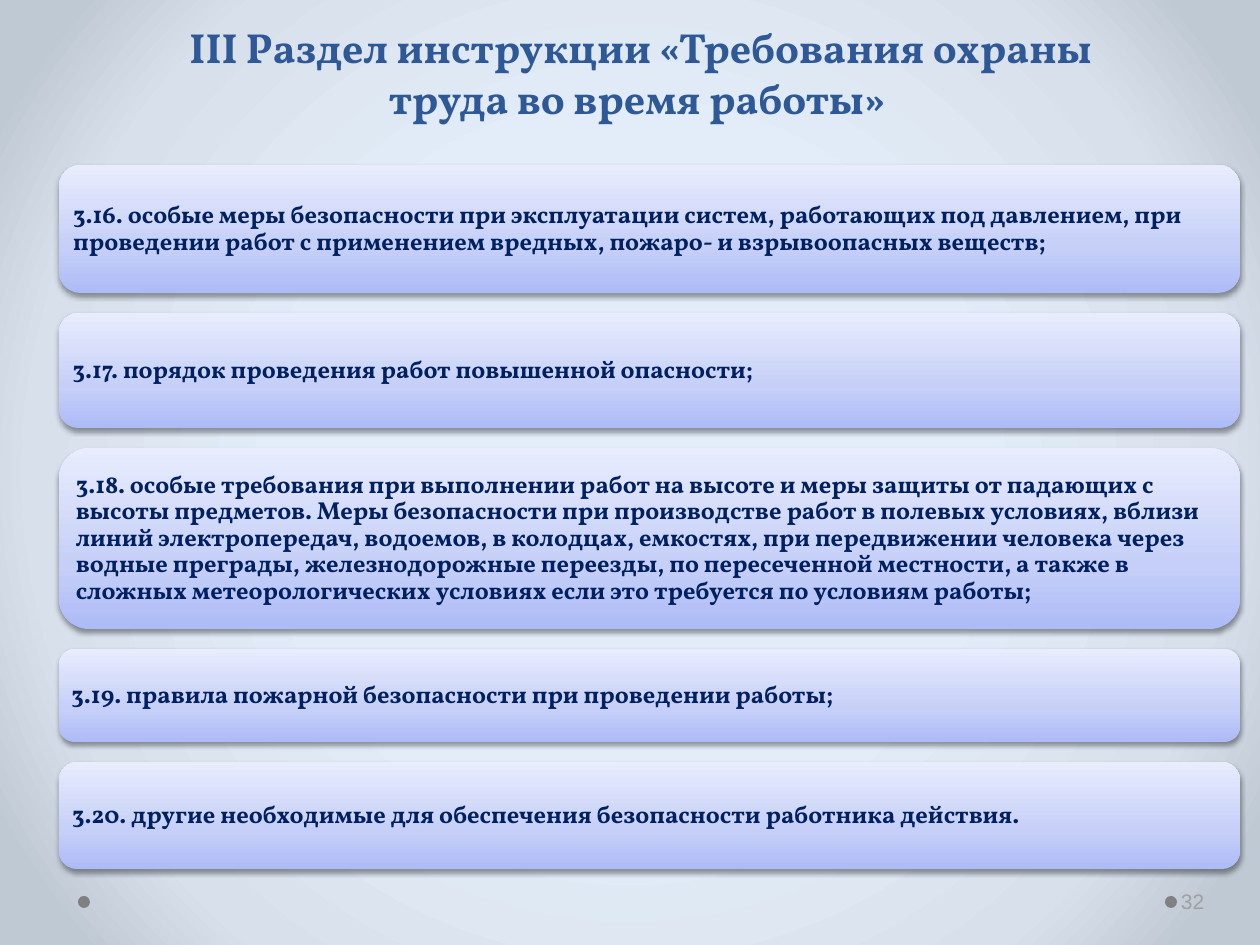
from lxml.etree import SubElement
from pptx import Presentation
from pptx.dml.color import RGBColor
from pptx.enum.shapes import MSO_SHAPE
from pptx.enum.text import MSO_ANCHOR, PP_ALIGN
from pptx.oxml.ns import qn
from pptx.util import Pt

EMU_PER_PX = 914400 / 126
SLIDE_WIDTH, SLIDE_HEIGHT = 1260, 945

BACKGROUND_STOPS = [(43, "E3EDF9"), (76, "D8E0EB"), (92, "BFC9D4")]
PANEL_STOPS = [(0, "ADBBF6"), (35, "C5CFF8"), (100, "E8ECFD")]

TITLE_FORMAT = {"size": Pt(24), "name": "Vollkorn", "bold": True}
PANEL_FORMAT = {"size": Pt(14), "name": "Vollkorn", "bold": True}
NUMBER_FORMAT = {"size": Pt(12), "name": "Arial", "bold": False}

PANEL_LEFT, PANEL_TOP, PANEL_WIDTH, PANEL_GAP = 59, 165, 1181, 20
PANELS = [
    (128, "3.16. особые меры безопасности при эксплуатации систем, работающих под давлением, "
          "при проведении работ с применением вредных, пожаро- и взрывоопасных веществ;"),
    (115, "3.17. порядок проведения работ повышенной опасности;"),
    (181, "3.18. особые требования при выполнении работ на высоте и меры защиты от падающих "
          "с высоты предметов. Меры безопасности при производстве работ в полевых условиях, "
          "вблизи линий электропередач, водоемов, в колодцах, емкостях, при передвижении "
          "человека через водные преграды, железнодорожные переезды, по пересеченной "
          "местности, а также в сложных метеорологических условиях если это требуется "
          "по условиям работы;"),
    (93, "3.19. правила пожарной безопасности при проведении работы;"),
    (107, "3.20. другие необходимые для обеспечения безопасности работника действия."),
]


def px(length):
    return round(length * EMU_PER_PX)


def color(hex_string):
    return RGBColor.from_string(hex_string)


def set_attributes(target, values):
    for name, value in values.items():
        setattr(target, name, value)


def replace_solid_with_gradient(properties, stops, angle=None):
    """Use a linear gradient at the given angle, or a circular one without it."""
    solid = properties.find(qn("a:solidFill"))
    gradient = properties.makeelement(qn("a:gradFill"), {"rotWithShape": "1"})
    stop_list = SubElement(gradient, qn("a:gsLst"))
    for position, hex_string in stops:
        stop = SubElement(stop_list, qn("a:gs"), pos=str(position * 1000))
        SubElement(stop, qn("a:srgbClr"), val=hex_string)
    if angle is None:
        circle = SubElement(gradient, qn("a:path"), path="circle")
        SubElement(circle, qn("a:fillToRect"), dict.fromkeys("ltrb", "50000"))
    else:
        SubElement(gradient, qn("a:lin"), ang=str(angle * 60000), scaled="0")
    properties.replace(solid, gradient)


def add_drop_shadow(shape):
    effects = shape._element.spPr.find(qn("a:effectLst"))
    shadow = SubElement(effects, qn("a:outerShdw"), blurRad=str(Pt(3.1)),
                        dist=str(Pt(1.6)), dir="5400000", rotWithShape="0")
    shadow_color = SubElement(shadow, qn("a:srgbClr"), val="000000")
    SubElement(shadow_color, qn("a:alpha"), val="38000")


class SlideBuilder:
    def __init__(self, slide):
        self.slide = slide

    def background(self, stops):
        self.slide.background.fill.solid()
        properties = self.slide._element.find(".//" + qn("p:bgPr"))
        replace_solid_with_gradient(properties, stops)

    def shape(self, kind, box, fill):
        shape = self.slide.shapes.add_shape(kind, *map(px, box))
        shape.shadow.inherit = False
        shape.fill.solid()
        shape.fill.fore_color.rgb = color(fill)
        shape.line.fill.background()
        return shape

    def set_text(self, shape, text, font_format, hex_string, margins,
                 anchor=MSO_ANCHOR.MIDDLE, **paragraph_format):
        frame = shape.text_frame
        sides = ("margin_left", "margin_top", "margin_right", "margin_bottom")
        set_attributes(frame, dict(zip(sides, map(px, margins))))
        set_attributes(frame, {"word_wrap": True, "vertical_anchor": anchor})
        paragraph = frame.paragraphs[0]
        set_attributes(paragraph, {"alignment": PP_ALIGN.LEFT, **paragraph_format})
        run = paragraph.add_run()
        run.text = text
        set_attributes(run.font, font_format)
        run.font.color.rgb = color(hex_string)

    def text(self, box, *args, **kwargs):
        self.set_text(self.slide.shapes.add_textbox(*map(px, box)), *args, **kwargs)

    def dot(self, left, top):
        self.shape(MSO_SHAPE.OVAL, (left, top, 12, 12), "808080")

    def panel(self, box, text):
        shape = self.shape(MSO_SHAPE.ROUNDED_RECTANGLE, box, PANEL_STOPS[0][1])
        replace_solid_with_gradient(shape._element.spPr, PANEL_STOPS, angle=270)
        add_drop_shadow(shape)
        self.set_text(shape, text, PANEL_FORMAT, "002060", (8, 8, 8, 8), line_spacing=0.9)


def main():
    presentation = Presentation()
    presentation.slide_width = px(SLIDE_WIDTH)
    presentation.slide_height = px(SLIDE_HEIGHT)
    builder = SlideBuilder(presentation.slides.add_slide(presentation.slide_layouts[6]))

    builder.background(BACKGROUND_STOPS)
    for left in (1165, 78):
        builder.dot(left, 896)
    builder.text((1177, 876, 77, 50), "32", NUMBER_FORMAT, "A0A0A0", (4, 6, 6, 6))
    builder.text((159, 16, 963, 115),
                 "III Раздел инструкции «Требования охраны труда во время работы» ",
                 TITLE_FORMAT, "2F5897", (13, 6, 13, 6),
                 anchor=MSO_ANCHOR.TOP, alignment=PP_ALIGN.CENTER)

    top = PANEL_TOP
    for height, text in PANELS:
        builder.panel((PANEL_LEFT, top, PANEL_WIDTH, height), text)
        top += height + PANEL_GAP

    presentation.save("out.pptx")


if __name__ == "__main__":
    main()
